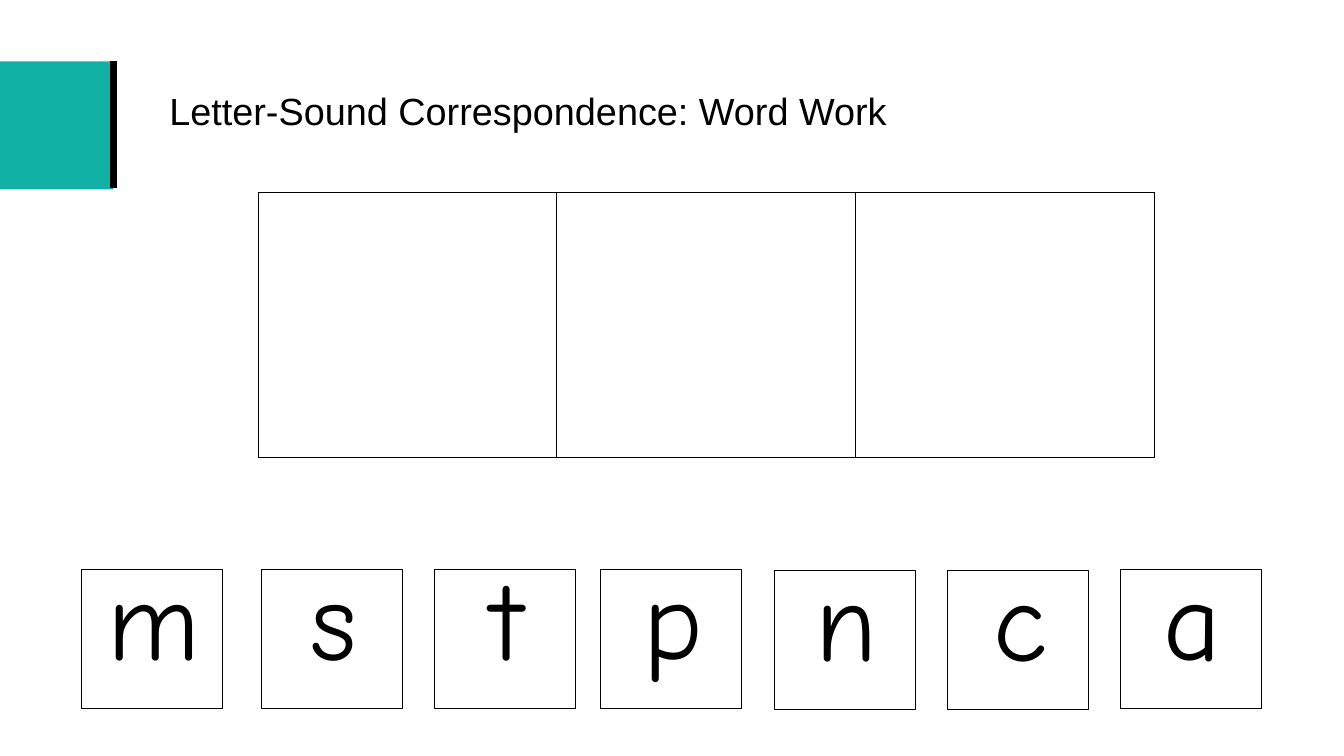
from lxml import etree
from pptx import Presentation
from pptx.dml.color import RGBColor
from pptx.enum import shapes, text
from pptx.oxml.ns import qn
from pptx.util import Inches, Pt

BLACK = "000000"


def color(code):
    return RGBColor.from_string(code)


def write(para, words, font, size):
    run = para.add_run()
    run.text = words
    run.font.name = font
    run.font.size = Pt(size)
    run.font.color.rgb = color(BLACK)


deck = Presentation()
deck.slide_width = Inches(13.33)
deck.slide_height = Inches(7.5)
slide = deck.slides.add_slide(deck.slide_layouts[5])

# Accent block with its black edge
block = slide.shapes.add_shape(
    shapes.MSO_SHAPE.RECTANGLE, 0, Inches(0.61), Inches(1.12), Inches(1.27))
block.shadow.inherit = False
block.fill.solid()
block.fill.fore_color.rgb = color("11B2A5")
block.line.fill.background()

edge = slide.shapes.add_connector(
    shapes.MSO_CONNECTOR.STRAIGHT,
    Inches(1.13), Inches(0.61), Inches(1.13), Inches(1.87))
edge.line.color.rgb = color(BLACK)
edge.line.width = Pt(5)
etree.SubElement(edge._element.spPr, qn("a:effectLst"))

# Title
title = slide.shapes.title
title.left, title.top = Inches(1.58), Inches(0.4)
title.width, title.height = Inches(10.83), Inches(1.45)
frame = title.text_frame
frame.word_wrap = True
frame.auto_size = text.MSO_AUTO_SIZE.NONE
frame.vertical_anchor = text.MSO_ANCHOR.MIDDLE
para = frame.paragraphs[0]
para.alignment = text.PP_ALIGN.LEFT
para.line_spacing = 0.9
write(para, "Letter-Sound Correspondence: Word Work", "Arial", 27)

# Three sound boxes
holder = slide.shapes.add_table(
    1, 3, Inches(2.56), Inches(1.91), Inches(8.89), Inches(2.63))
table = holder.table
table.first_row = False
table.horz_banding = False
for cell in table.rows[0].cells:
    cell.fill.background()
    props = cell._tc.get_or_add_tcPr()
    for spot, side in enumerate(("a:lnL", "a:lnR", "a:lnT", "a:lnB")):
        line = etree.Element(qn(side), w=str(Pt(1)))
        fill = etree.SubElement(line, qn("a:solidFill"))
        etree.SubElement(fill, qn("a:srgbClr"), val=BLACK)
        props.insert(spot, line)

# Letter cards
cards = [("m", 0.81, 5.65), ("s", 2.59, 5.65), ("t", 4.31, 5.65),
         ("p", 5.96, 5.65), ("n", 7.68, 5.66), ("c", 9.4, 5.66),
         ("a", 11.11, 5.65)]
for letter, left, top in cards:
    card = slide.shapes.add_shape(
        shapes.MSO_SHAPE.RECTANGLE,
        Inches(left), Inches(top), Inches(1.4), Inches(1.38))
    card.shadow.inherit = False
    card.fill.background()
    card.line.color.rgb = color(BLACK)
    card.line.width = Pt(0.75)
    frame = card.text_frame
    frame.word_wrap = True
    frame.vertical_anchor = text.MSO_ANCHOR.TOP
    para = frame.paragraphs[0]
    para.alignment = text.PP_ALIGN.CENTER
    para.line_spacing = 0.8
    para.space_before = Pt(10)
    para._p.get_or_add_pPr().set("marL", str(Inches(0.04)))
    write(para, letter, "Comic Neue", 80)

deck.save("out.pptx")
